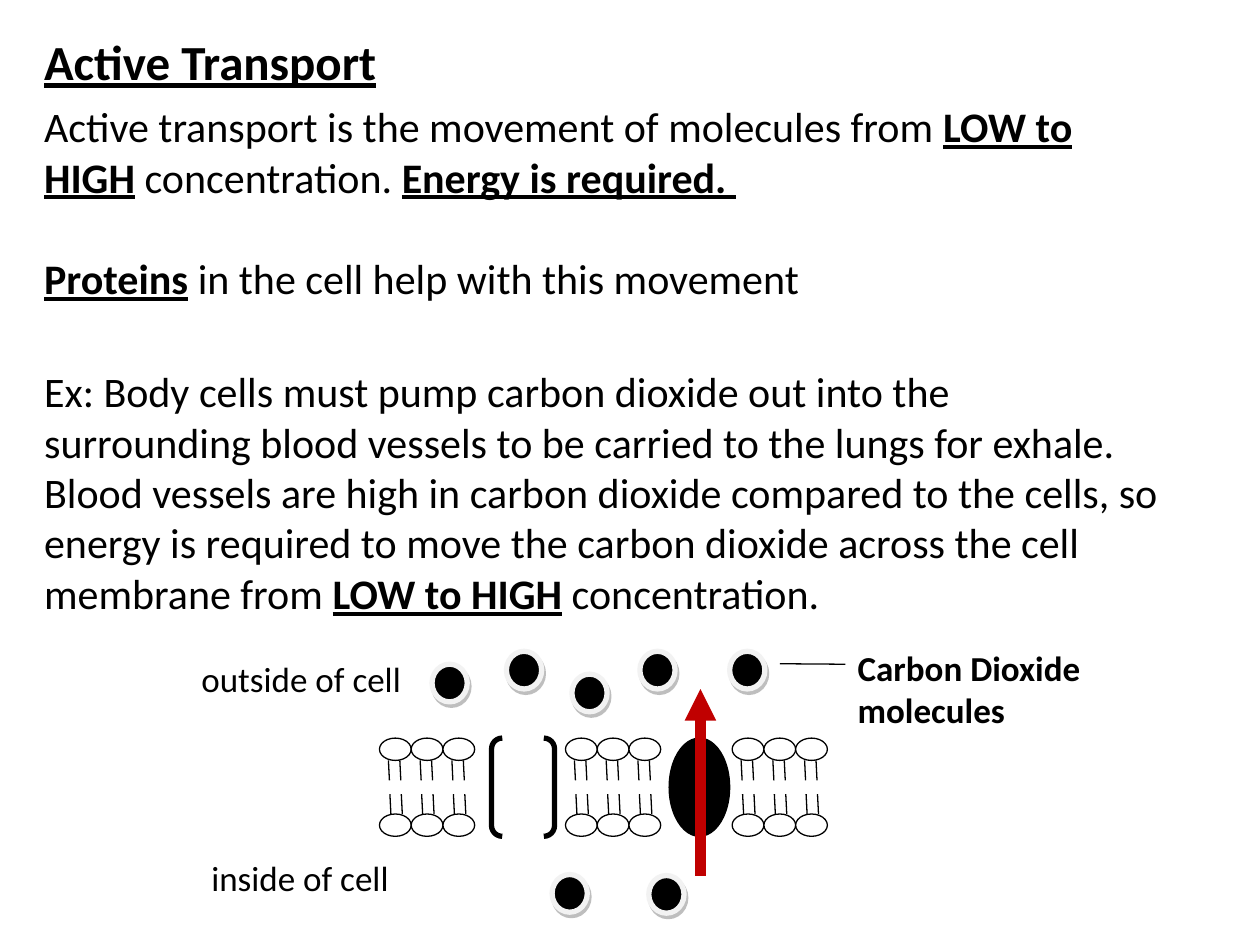
"""Build a slide that explains active transport across a cell membrane."""
from typing import Any, NamedTuple

import lxml.etree
import pptx
import pptx.dml.color
import pptx.enum.shapes
import pptx.oxml.ns
import pptx.util

Cm = pptx.util.Cm
Pt = pptx.util.Pt
qn = pptx.oxml.ns.qn
KIND = pptx.enum.shapes.MSO_SHAPE
INK = {"black": "000000", "white": "FFFFFF", "pale": "F2F2F2", "grey": "7F7F7F", "red": "C00000"}
PLAIN = {"name": "Calibri", "bold": False, "underline": False}
BOLD = {**PLAIN, "bold": True}
STRONG = {**BOLD, "underline": True}


class Box(NamedTuple):
    left: float
    top: float
    wide: float
    high: float


class Run(NamedTuple):
    text: str
    form: dict[str, Any] = PLAIN


class Para(NamedTuple):
    runs: list[Run]
    size: int = 24
    after: float = 0


BODY = [
    Para([Run("Active Transport", STRONG)], 28, 6),
    Para([
        Run("Active transport is the movement of molecules from "),
        Run("LOW to HIGH", STRONG),
        Run(" concentration. "),
        Run("Energy is required. ", STRONG),
    ], after=29),
    Para([Run("Proteins", STRONG), Run(" in the cell help with this movement")], after=36),
    Para([
        Run("Ex: Body cells must pump carbon dioxide out into the surrounding blood vessels "
            "to be carried to the lungs for exhale. Blood vessels are high in carbon dioxide "
            "compared to the cells, so energy is required to move the carbon dioxide across "
            "the cell membrane from "),
        Run("LOW to HIGH", STRONG),
        Run(" concentration."),
    ]),
]
LABELS = [
    (Box(3.81, 13.13, 5.89, 1.22), Run("outside of cell")),
    (Box(4.01, 17.15, 5.74, 1.22), Run("inside of cell")),
    (Box(17.04, 12.9, 7.72, 1.78), Run("Carbon Dioxide molecules", BOLD)),
]
DOTS = [(8.71, 13.39), (10.21, 13.13), (11.53, 13.59), (12.9, 13.13), (14.71, 13.13),
        (11.13, 17.63), (13.08, 17.65)]
HEAD = (0.64, 0.45)
PITCH = 0.64
OUTER, INNER = 14.88, 16.41


def shade(name: str) -> pptx.dml.color.RGBColor:
    return pptx.dml.color.RGBColor.from_string(INK[name])


def apply(item: Any, form: dict[str, Any]) -> None:
    for key, value in form.items():
        setattr(item, key, value)


def write(slide: Any, box: Box, paras: list[Para]) -> None:
    frame = slide.shapes.add_textbox(*map(Cm, box)).text_frame
    frame.word_wrap = True
    for spot, para in enumerate(paras):
        line = frame.paragraphs[0] if spot == 0 else frame.add_paragraph()
        line.space_after = Pt(para.after)
        for part in para.runs:
            run = line.add_run()
            run.text = part.text
            apply(run.font, {**part.form, "size": Pt(para.size)})
            run.font.color.rgb = shade("black")


def form(slide: Any, kind: Any, box: Box, fill: str | None, edge: str = "black",
         width: float = 0.75) -> Any:
    shape = slide.shapes.add_shape(kind, *map(Cm, box))
    if fill:
        shape.fill.solid()
        shape.fill.fore_color.rgb = shade(fill)
    else:
        shape.fill.background()
    shape.line.color.rgb = shade(edge)
    shape.line.width = Pt(width)
    shape.shadow.inherit = False
    return shape


def stroke(slide: Any, start: tuple[float, float], end: tuple[float, float],
           tint: str = "black", width: float = 0.75, arrow: bool = False) -> None:
    kind = pptx.enum.shapes.MSO_CONNECTOR.STRAIGHT
    line = slide.shapes.add_connector(kind, *map(Cm, (*start, *end)))
    line.line.color.rgb = shade(tint)
    line.line.width = Pt(width)
    props = line.element.spPr
    if arrow:
        lxml.etree.SubElement(props.find(qn("a:ln")), qn("a:tailEnd"), type="triangle")
    lxml.etree.SubElement(props, qn("a:effectLst"))


def lipid(slide: Any, left: float, top: float, sign: int) -> None:
    wide, high = HEAD
    form(slide, KIND.OVAL, Box(left, top, wide, high), "white")
    mid, root = left + wide / 2, top + high / 2 + sign * high / 2
    for shift in (-0.14, 0.09):
        base = mid + sign * shift
        stroke(slide, (base, root), (base + sign * 0.02, root + sign * 0.4))


def patch(slide: Any, left: float) -> None:
    for step in range(3):
        for top, sign in ((OUTER, 1), (INNER, -1)):
            lipid(slide, left + step * PITCH, top, sign)


def dot(slide: Any, left: float, top: float) -> None:
    shape = form(slide, KIND.OVAL, Box(left, top, 0.71, 0.76), "black", "pale", 3)
    glow = lxml.etree.SubElement(shape.element.spPr.find(qn("a:effectLst")), qn("a:outerShdw"),
                                 dist=str(Pt(2.2)), dir=str(63 * 60000), rotWithShape="0")
    tint = lxml.etree.SubElement(glow, qn("a:srgbClr"), val=INK["grey"])
    lxml.etree.SubElement(tint, qn("a:alpha"), val="50000")


def main() -> None:
    deck = pptx.Presentation()
    apply(deck, {"slide_width": Cm(25.4), "slide_height": Cm(19.05)})
    slide = deck.slides.add_slide(deck.slide_layouts[6])
    write(slide, Box(0.64, 0.51, 23.06, 12.95), BODY)
    for box, run in LABELS:
        write(slide, box, [Para([run], 20)])
    stroke(slide, (15.72, 13.38), (17.04, 13.39))
    for left in (7.65, 11.4, 14.76):
        patch(slide, left)
    gate = form(slide, KIND.DOUBLE_BRACKET, Box(9.91, OUTER, 1.27, 1.98), None, width=3)
    gate.adjustments[0] = 0.17
    form(slide, KIND.OVAL, Box(13.49, OUTER, 1.22, 1.98), "black")
    stroke(slide, (14.12, 17.65), (14.12, 13.89), "red", 6, True)
    for place in DOTS:
        dot(slide, *place)
    deck.save("out.pptx")


if __name__ == "__main__":
    main()
